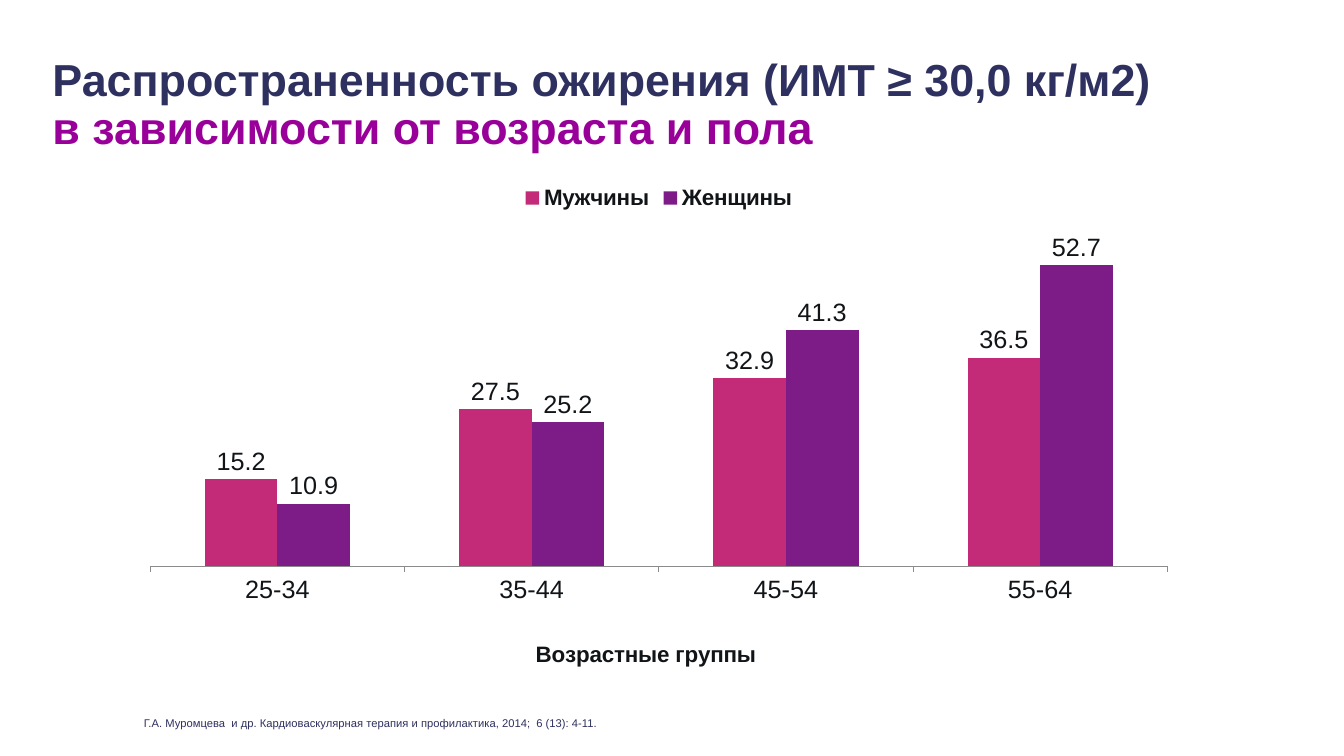
from dataclasses import dataclass

from lxml import etree
from pptx import Presentation
from pptx.chart.data import CategoryChartData
from pptx.dml.color import RGBColor
from pptx.enum.chart import (XL_CHART_TYPE, XL_LABEL_POSITION,
                             XL_LEGEND_POSITION, XL_TICK_MARK)
from pptx.enum.text import MSO_ANCHOR
from pptx.oxml.ns import qn
from pptx.util import Pt

PX = 9525
COLUMN = XL_CHART_TYPE.COLUMN_CLUSTERED
OUTSIDE = XL_LABEL_POSITION.OUTSIDE_END
TOP = XL_LEGEND_POSITION.TOP
TICK_OUT = XL_TICK_MARK.OUTSIDE
MIDDLE = MSO_ANCHOR.MIDDLE


@dataclass(frozen=True)
class Theme:
    face: str = "Arial"
    navy: str = "2E305F"
    violet: str = "990099"
    ink: str = "111518"
    gray: str = "8B8B8B"
    men: str = "C32B78"
    women: str = "7D1C87"
    head: int = 32
    label: int = 18
    key: int = 16
    note: int = 8


class Deck:
    """Draws styled elements on the current slide."""

    def __init__(self, theme, width, height):
        self.theme = theme
        self.file = Presentation()
        self.file.slide_width = width * PX
        self.file.slide_height = height * PX
        self.slide = self.file.slides.add_slide(self.file.slide_layouts[6])

    def style(self, font, size, color, bold=False):
        font.name = self.theme.face
        font.size = Pt(size)
        font.bold = bold
        font.color.rgb = RGBColor.from_string(color)

    def text(self, box, lines, size, bold=False, spacing=1.0):
        frame = self.slide.shapes.add_textbox(*(n * PX for n in box)).text_frame
        frame.word_wrap = True
        frame.vertical_anchor = MIDDLE
        frame.margin_left = frame.margin_right = 0
        frame.margin_top = frame.margin_bottom = 0
        para = frame.paragraphs[0]
        para.line_spacing = spacing
        for i, (words, color) in enumerate(lines):
            if i:
                para.add_line_break()
            run = para.add_run()
            run.text = words
            self.style(run.font, size, color, bold)

    def place(self, parent, index, **parts):
        for old in parent.findall(qn("c:layout")):
            parent.remove(old)
        layout = etree.Element(qn("c:layout"))
        manual = etree.SubElement(layout, qn("c:manualLayout"))
        for tag, value in parts.items():
            etree.SubElement(manual, qn(f"c:{tag}")).set("val", str(value))
        parent.insert(index, layout)

    def chart(self, box, groups, series, caption):
        theme = self.theme
        data = CategoryChartData()
        data.categories = groups
        for name, values, _ in series:
            data.add_series(name, values)
        chart = self.slide.shapes.add_chart(
            COLUMN, *(n * PX for n in box), data).chart
        self.style(chart.font, theme.label, theme.ink)
        chart.has_title = False
        chart.has_legend = True
        chart.legend.position = TOP
        chart.legend.include_in_layout = False
        self.style(chart.legend.font, theme.key, theme.ink, True)
        self.bars(chart.plots[0], series)
        self.axes(chart, caption)
        area = chart.element.find(".//" + qn("c:plotArea"))
        self.place(area, 0, layoutTarget="inner", xMode="edge", yMode="edge",
                   x=0.02, y=0.1, w=0.96, h=0.69)

    def bars(self, plot, series):
        plot.gap_width = 150
        plot.overlap = 0
        plot.vary_by_categories = False
        for bar, (_, _, color) in zip(plot.series, series):
            bar.format.fill.solid()
            bar.format.fill.fore_color.rgb = RGBColor.from_string(color)
            labels = bar.data_labels
            labels.show_value = True
            labels.position = OUTSIDE
            self.style(labels.font, self.theme.label, self.theme.ink)

    def axes(self, chart, caption):
        theme = self.theme
        scale = chart.value_axis
        scale.visible = False
        scale.has_major_gridlines = False
        scale.minimum_scale = 0
        scale.maximum_scale = 60
        axis = chart.category_axis
        axis.major_tick_mark = TICK_OUT
        axis.format.line.color.rgb = RGBColor.from_string(theme.gray)
        axis.format.line.width = Pt(0.75)
        self.style(axis.tick_labels.font, theme.label, theme.ink)
        title = axis.axis_title
        run = title.text_frame.paragraphs[0].add_run()
        run.text = caption
        self.style(run.font, theme.key, theme.ink, True)
        self.place(title.element, 1, xMode="edge", yMode="edge",
                   x=0.38, y=0.93)


def main():
    theme = Theme()
    deck = Deck(theme, 1280, 720)
    deck.text((50, 50, 1179, 102),
              [("Распространенность ожирения (ИМТ ≥ 30,0 кг/м2)", theme.navy),
               ("в зависимости от возраста и пола", theme.violet)],
              theme.head, bold=True, spacing=0.9)
    deck.chart((123, 166, 1009, 475),
               ["25-34", "35-44", "45-54", "55-64"],
               [("Мужчины", (15.2, 27.5, 32.9, 36.5), theme.men),
                ("Женщины", (10.9, 25.2, 41.3, 52.7), theme.women)],
               "Возрастные группы")
    deck.text((137, 677, 890, 23),
              [("Г.А. Муромцева  и др. Кардиоваскулярная терапия и "
                "профилактика, 2014;  6 (13): 4-11.", theme.navy)],
              theme.note)
    deck.file.save("out.pptx")


if __name__ == "__main__":
    main()
